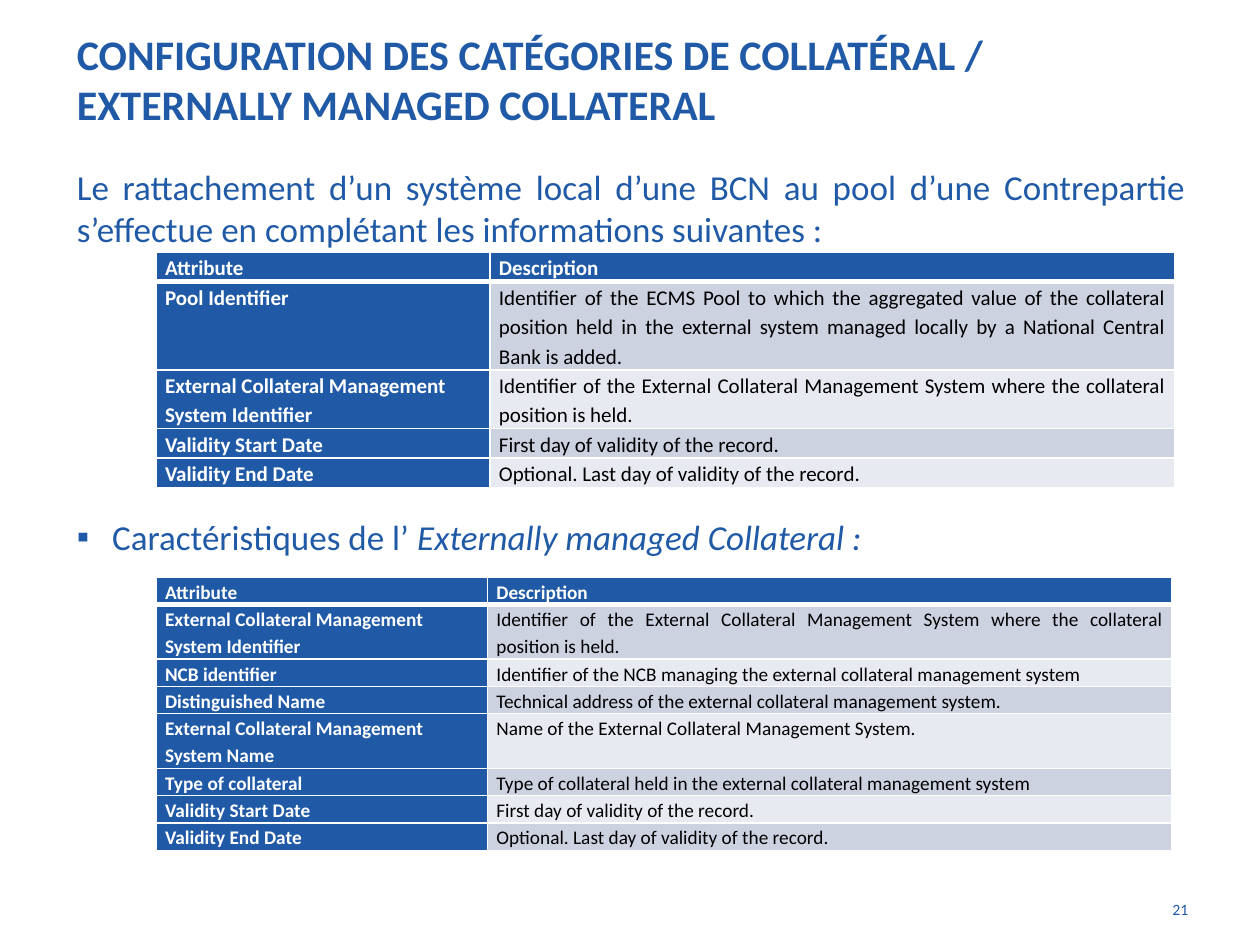
from lxml.etree import SubElement
from pptx import Presentation
from pptx.dml.color import RGBColor
from pptx.enum.text import MSO_ANCHOR, MSO_AUTO_SIZE, PP_ALIGN
from pptx.oxml.ns import qn
from pptx.util import Inches, Pt

FONT = "Calibri"
BLUE = RGBColor(0x20, 0x5A, 0xA7)
WHITE = RGBColor(0xFF, 0xFF, 0xFF)
BLACK = RGBColor(0, 0, 0)
BANDS = [RGBColor(0xCD, 0xD2, 0xE1), RGBColor(0xE8, 0xEA, 0xF1)]

# Content
TITLE = "CONFIGURATION DES CATÉGORIES DE COLLATÉRAL / EXTERNALLY MANAGED COLLATERAL"
INTRO = ("Le rattachement d’un système local d’une BCN au pool d’une Contrepartie "
         "s’effectue en complétant les informations suivantes :")
FEATURES = [("Caractéristiques de l’ ", False), ("Externally managed Collateral :", True)]
PAGE = "21"

HEADER = ("Attribute", "Description", 1)
SYSTEM_ID = ("External Collateral Management System Identifier",
             "Identifier of the External Collateral Management System where the "
             "collateral position is held.", 2)
VALIDITY = [("Validity Start Date", "First day of validity of the record.", 1),
            ("Validity End Date", "Optional. Last day of validity of the record.", 1)]

# Each row: attribute, description, number of text lines
TABLES = [
    dict(top=2, widths=(2.65, 5.43), size=12, line=0.23, rows=[
        HEADER,
        ("Pool Identifier",
         "Identifier of the ECMS Pool to which the aggregated value of the collateral "
         "position held in the external system managed locally by a National Central "
         "Bank is added.", 3),
        SYSTEM_ID, *VALIDITY]),
    dict(top=4.58, widths=(2.63, 5.43), size=11, line=0.21, rows=[
        HEADER,
        SYSTEM_ID,
        ("NCB identifier",
         "Identifier of the NCB managing the external collateral management system", 1),
        ("Distinguished Name",
         "Technical address of the external collateral management system.", 1),
        ("External Collateral Management System Name",
         "Name of the External Collateral Management System.", 2),
        ("Type of collateral",
         "Type of collateral held in the external collateral management system", 1),
        *VALIDITY]),
]
TABLE_LEFT = 1.24


def add_run(p, text, size, color=BLUE, bold=False, italic=False):
    r = p.add_run()
    r.text = text
    f = r.font
    f.name, f.size, f.bold, f.italic = FONT, Pt(size), bold, italic
    f.color.rgb = color


def place(sp, left, top, width, height):
    sp.left, sp.top = Inches(left), Inches(top)
    sp.width, sp.height = Inches(width), Inches(height)


def set_bullet(p, char=None, indent=0):
    pPr = p._p.get_or_add_pPr()
    pPr.set("marL", str(Inches(indent)))
    pPr.set("indent", str(-Inches(indent)))
    if char:
        SubElement(pPr, qn("a:buChar")).set("char", char)
    else:
        SubElement(pPr, qn("a:buNone"))


def set_borders(cell, row):
    tcPr = cell._tc.get_or_add_tcPr()
    heavy = {0: "lnB", 1: "lnT"}.get(row)
    for side in ("lnL", "lnR", "lnT", "lnB"):
        ln = SubElement(tcPr, qn("a:" + side))
        ln.set("w", str(Pt(3 if side == heavy else 1)))
        fill = SubElement(ln, qn("a:solidFill"))
        SubElement(fill, qn("a:srgbClr")).set("val", str(WHITE))


def add_attribute_table(s, top, widths, size, line, rows):
    height = line * sum(lines for _, _, lines in rows)
    tbl = s.shapes.add_table(len(rows), 2, Inches(TABLE_LEFT), Inches(top),
                             Inches(sum(widths)), Inches(height)).table
    for col, width in zip(tbl.columns, widths):
        col.width = Inches(width)
    for i, (*texts, lines) in enumerate(rows):
        tbl.rows[i].height = Inches(line * lines)
        for j, text in enumerate(texts):
            cell = tbl.cell(i, j)
            label = i == 0 or j == 0
            cell.margin_left = cell.margin_right = Inches(0.07)
            cell.margin_top = cell.margin_bottom = 0
            set_borders(cell, i)
            cell.fill.solid()
            cell.fill.fore_color.rgb = BLUE if label else BANDS[(i - 1) % 2]
            p = cell.text_frame.paragraphs[0]
            p.alignment = PP_ALIGN.LEFT if label else PP_ALIGN.JUSTIFY
            p.line_spacing = 1.15
            add_run(p, text, size, WHITE if label else BLACK, bold=label)


prs = Presentation()
prs.slide_width, prs.slide_height = Inches(10), Inches(7.5)
s = prs.slides.add_slide(prs.slide_layouts[1])

# Title
title = s.shapes.title
place(title, 0.51, 0, 9, 1.25)
tf = title.text_frame
tf.auto_size = MSO_AUTO_SIZE.NONE
tf.vertical_anchor = MSO_ANCHOR.MIDDLE
p = tf.paragraphs[0]
p.alignment = PP_ALIGN.LEFT
add_run(p, TITLE, 24, bold=True)

# Body: introduction, then the bullet below the first table
body = s.placeholders[1]
place(body, 0.51, 1.26, 9, 5.83)
tf = body.text_frame
tf.auto_size = MSO_AUTO_SIZE.NONE
p = tf.paragraphs[0]
set_bullet(p)
p.alignment = PP_ALIGN.JUSTIFY
p.space_before = Pt(0)
add_run(p, INTRO, 20)
p = tf.add_paragraph()
set_bullet(p, "▪", 0.28)
p.space_before = Pt(152)
for text, italic in FEATURES:
    add_run(p, text, 20, italic=italic)

# Attribute tables
for table in TABLES:
    add_attribute_table(s, **table)

# Page number
number = s.shapes.add_textbox(Inches(8.94), Inches(7.09), Inches(0.59), Inches(0.39))
tf = number.text_frame
tf.word_wrap = True
p = tf.paragraphs[0]
p.alignment = PP_ALIGN.RIGHT
add_run(p, PAGE, 9)

prs.save("out.pptx")
